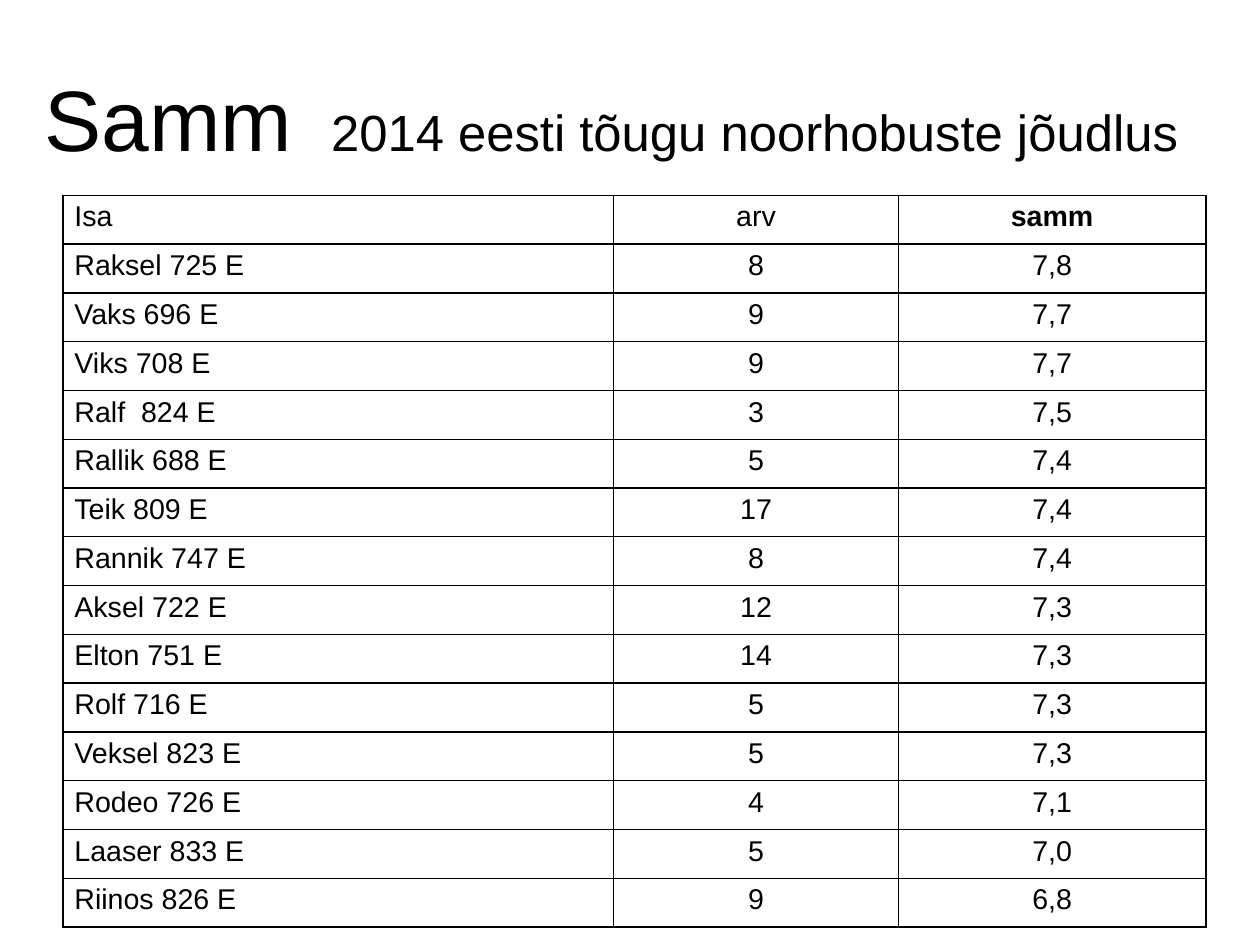
from lxml import etree
from pptx import Presentation
from pptx import util as u
from pptx.dml import color
from pptx.enum import text
from pptx.oxml import ns

THEME = {
    "font": "Arial",
    "ink": color.RGBColor(0, 0, 0),
    "border": "000000",
    "border_width": u.Pt(1),
    "title_size": 54,
    "gap_size": 44,
    "subtitle_size": 32,
    "table_size": 18,
}


def add_text(paragraph, words, size, bold=False):
    run = paragraph.add_run()
    run.text = words
    formats = {"name": THEME["font"], "size": u.Pt(size), "bold": bold}
    for name, value in formats.items():
        setattr(run.font, name, value)
    run.font.color.rgb = THEME["ink"]


def add_borders(cell):
    properties = cell._tc.get_or_add_tcPr()
    for side in ("a:lnL", "a:lnR", "a:lnT", "a:lnB"):
        line = etree.SubElement(properties, ns.qn(side), w=str(THEME["border_width"]))
        fill = etree.SubElement(line, ns.qn("a:solidFill"))
        etree.SubElement(fill, ns.qn("a:srgbClr"), val=THEME["border"])


presentation = Presentation()
presentation.slide_width = u.Cm(28)
presentation.slide_height = u.Cm(21)
slide = presentation.slides.add_slide(presentation.slide_layouts[6])

title = slide.shapes.add_textbox(u.Cm(0.6), u.Cm(0.85), u.Cm(26), u.Cm(3.5))
title_format = {
    "word_wrap": True,
    "vertical_anchor": text.MSO_ANCHOR.MIDDLE,
    "margin_left": 0,
    "margin_right": 0,
    "margin_top": 0,
    "margin_bottom": 0,
}
for name, value in title_format.items():
    setattr(title.text_frame, name, value)
title_paragraph = title.text_frame.paragraphs[0]
title_paragraph.alignment = text.PP_ALIGN.CENTER
for words, size in (
    ("Samm", THEME["title_size"]),
    ("  ", THEME["gap_size"]),
    ("2014 eesti tõugu noorhobuste jõudlus", THEME["subtitle_size"]),
):
    add_text(title_paragraph, words, size)

results = [
    ("Isa", "arv", "samm"),
    ("Raksel 725 E", "8", "7,8"),
    ("Vaks 696 E", "9", "7,7"),
    ("Viks 708 E", "9", "7,7"),
    ("Ralf  824 E", "3", "7,5"),
    ("Rallik 688 E", "5", "7,4"),
    ("Teik 809 E", "17", "7,4"),
    ("Rannik 747 E", "8", "7,4"),
    ("Aksel 722 E", "12", "7,3"),
    ("Elton 751 E", "14", "7,3"),
    ("Rolf 716 E", "5", "7,3"),
    ("Veksel 823 E", "5", "7,3"),
    ("Rodeo 726 E", "4", "7,1"),
    ("Laaser 833 E", "5", "7,0"),
    ("Riinos 826 E", "9", "6,8"),
]
column_widths = (12.24, 6.32, 6.84)
alignments = (text.PP_ALIGN.LEFT, text.PP_ALIGN.CENTER, text.PP_ALIGN.CENTER)

table = slide.shapes.add_table(
    len(results), len(column_widths),
    u.Cm(1.4), u.Cm(4.34), u.Cm(sum(column_widths)), u.Cm(16.26),
).table
for name, value in {"first_row": False, "horz_banding": False}.items():
    setattr(table, name, value)
for column, width in zip(table.columns, column_widths):
    column.width = u.Cm(width)

for row, values in zip(table.rows, results):
    for cell, value, alignment in zip(row.cells, values, alignments):
        add_borders(cell)
        cell.fill.background()
        paragraph = cell.text_frame.paragraphs[0]
        paragraph.alignment = alignment
        add_text(paragraph, value, THEME["table_size"], bold=value == "samm")

presentation.save("out.pptx")
